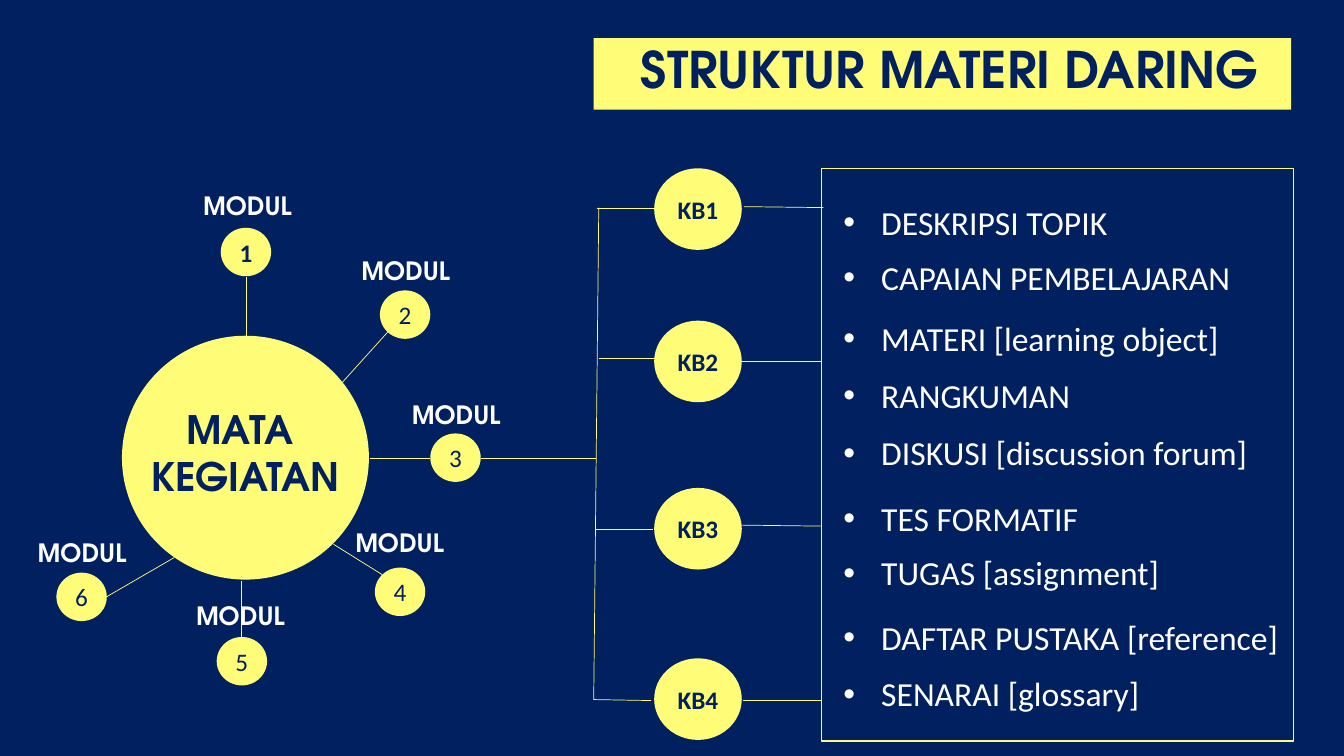
from lxml import etree
from pptx import Presentation
from pptx.dml.color import RGBColor
from pptx.enum import shapes, text
from pptx.oxml import ns
from pptx.util import Pt

COLORS = {"navy": "002060", "yellow": "FFFD78", "white": "FFFFFF"}
HEADING, BODY = "TeX Gyre Adventor", "Calibri"
OVAL, RECT = shapes.MSO_SHAPE.OVAL, shapes.MSO_SHAPE.RECTANGLE
LEFT, CENTER, RIGHT = (text.PP_ALIGN.LEFT, text.PP_ALIGN.CENTER,
                       text.PP_ALIGN.RIGHT)


def rgb(name):
    return RGBColor.from_string(COLORS[name])


class Board:
    """Draws styled elements on one slide, all lengths in points."""

    def __init__(self, slide):
        self.slide = slide
        fill = slide.background.fill
        fill.solid()
        fill.fore_color.rgb = rgb("navy")

    def set_words(self, frame, words, size, font, color, bold, align):
        frame.text = words
        for paragraph in frame.paragraphs:
            paragraph.alignment = align
            for run in paragraph.runs:
                run.font.size = Pt(size)
                run.font.name = font
                run.font.bold = bold
                run.font.color.rgb = rgb(color)

    def shape(self, kind, box, fill="yellow", outline=None):
        shape = self.slide.shapes.add_shape(kind, *map(Pt, box))
        shape.shadow.inherit = False
        shape.fill.solid()
        shape.fill.fore_color.rgb = rgb(fill)
        if outline:
            shape.line.color.rgb = rgb(outline)
            shape.line.width = Pt(1)
        else:
            shape.line.fill.background()
        return shape

    def node(self, box, words, bold):
        """A yellow circle with a short centred text."""
        frame = self.shape(OVAL, box).text_frame
        frame.margin_left = frame.margin_right = 0
        frame.vertical_anchor = text.MSO_ANCHOR.MIDDLE
        self.set_words(frame, words, 18, BODY, "navy", bold, CENTER)

    def label(self, box, words, size, font=HEADING, color="navy", bold=True,
              align=CENTER, wrap=True):
        frame = self.slide.shapes.add_textbox(*map(Pt, box)).text_frame
        frame.word_wrap = wrap
        self.set_words(frame, words, size, font, color, bold, align)
        return frame

    def bullet(self, box, words):
        frame = self.label(box, words, 24, BODY, "white", False, LEFT)
        properties = frame.paragraphs[0]._p.get_or_add_pPr()
        properties.set("marL", str(Pt(27)))
        properties.set("indent", str(-Pt(27)))
        etree.SubElement(properties, ns.qn("a:buFont")).set("typeface", "Arial")
        etree.SubElement(properties, ns.qn("a:buChar")).set("char", "•")

    def line(self, *ends):
        connector = self.slide.shapes.add_connector(
            shapes.MSO_CONNECTOR.STRAIGHT, *map(Pt, ends))
        connector.line.color.rgb = rgb("yellow")
        connector.line.width = Pt(0.5)
        etree.SubElement(connector._element.spPr, ns.qn("a:effectLst"))


# circle corner, label corner, spoke ends
MODULES = [
    ((157.7, 162.7), (137.5, 132.5), (175.7, 239.8, 175.7, 198)),
    ((271.4, 207.4), (250.6, 178.6), (244.1, 273.6, 277.2, 236.9)),
    ((307.4, 309.6), (286.6, 281.5), (264.2, 327.6, 307.4, 327.6)),
    ((267.8, 405.4), (246.2, 373), (272.9, 410.4, 238.3, 388.8)),
    ((154.8, 455), (132.5, 425.5), (172.1, 457.2, 172.1, 414.7)),
    ((40.3, 409), (19.4, 380.2), (76.3, 426.2, 124.6, 398.2)),
]

# circle top, line from the trunk, line to the panel
ACTIVITIES = [
    (120.2, (426.2, 149, 467.3, 149), (531.4, 147.6, 588.2, 148.3)),
    (229, (427.7, 256.3, 468.7, 256.3), (529.2, 257.8, 586.1, 257.8)),
    (348.5, (425.5, 378, 466.6, 378), (529.2, 375.1, 586.1, 375.8)),
    (470.2, (424.1, 499.7, 465.1, 500.4), (530.6, 500.4, 586.8, 500.4)),
]

CONTENTS = [
    (140.4, "DESKRIPSI TOPIK"),
    (180, "CAPAIAN PEMBELAJARAN"),
    (223.2, "MATERI [learning object]"),
    (264.2, "RANGKUMAN"),
    (305.3, "DISKUSI [discussion forum]"),
    (352.1, "TES FORMATIF"),
    (391, "TUGAS [assignment]"),
    (437, "DAFTAR PUSTAKA [reference]"),
    (477.4, "SENARAI [glossary]"),
]


def main():
    deck = Presentation()
    deck.slide_width, deck.slide_height = Pt(960), Pt(540)
    board = Board(deck.slides.add_slide(deck.slide_layouts[6]))

    board.shape(RECT, (424.1, 27.3, 498.2, 51.1))
    title = board.label((434.2, 28.8, 471.6, 67), "STRUKTUR MATERI DARING",
                        36, align=RIGHT)
    title.paragraphs[0].line_spacing = 0.9

    board.shape(OVAL, (87.1, 239.8, 176.4, 174.2))
    board.label((87.1, 285.8, 176.4, 74.9), "MATA \nKEGIATAN", 28)
    for number, (circle, caption, spoke) in enumerate(MODULES, 1):
        board.line(*spoke)
        board.node((*circle, 36, 34.6), str(number), bold=number == 1)
        board.label((*caption, 78.5, 28.8), "MODUL", 18, color="white",
                    wrap=False)

    board.line(343.4, 327.6, 425.5, 327.6)
    board.line(427.7, 148.3, 424.1, 499.7)
    board.shape(RECT, (586.8, 120.2, 337, 409), "navy", "yellow")
    for number, (top, trunk_link, panel_link) in enumerate(ACTIVITIES, 1):
        board.node((467.3, top, 62.6, 58.3), f"KB{number}", bold=True)
        board.line(*trunk_link)
        board.line(*panel_link)

    for top, topic in CONTENTS:
        board.bullet((595.4, top, 335, 36), topic)

    deck.save("out.pptx")


if __name__ == "__main__":
    main()
